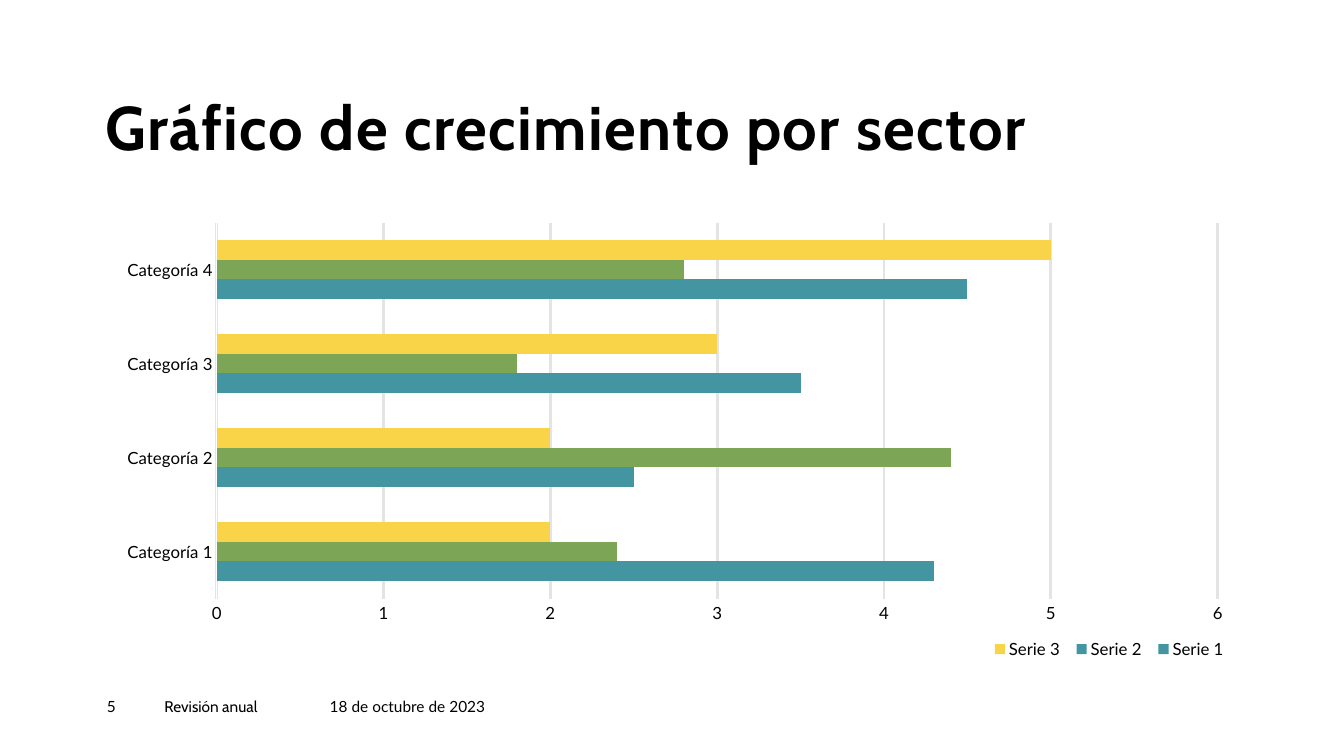
from lxml.etree import SubElement
from pptx import Presentation
from pptx.chart.data import CategoryChartData
from pptx.dml.color import RGBColor
from pptx.enum.chart import XL_CHART_TYPE as ChartType
from pptx.enum.chart import XL_LEGEND_POSITION as LegendPosition
from pptx.enum.chart import XL_TICK_MARK as TickMark
from pptx.enum.text import MSO_ANCHOR, MSO_AUTO_SIZE, PP_ALIGN
from pptx.oxml.ns import qn
from pptx.util import Inches, Pt

BLACK = RGBColor(0x00, 0x00, 0x00)
WHITE = RGBColor(0xFF, 0xFF, 0xFF)
GRID = RGBColor(0xE4, 0xE4, 0xE4)
TEAL = RGBColor(0x44, 0x95, 0xA2)
GREEN = RGBColor(0x7C, 0xA6, 0x55)
YELLOW = RGBColor(0xF9, 0xD4, 0x48)

HEADING_FONT = "Cabin"
BODY_FONT = "Lato"

CATEGORIES = [f"Categoría {number}" for number in range(1, 5)]
SERIES = [
    ("Serie 1", (4.3, 2.5, 3.5, 4.5), TEAL, TEAL),
    ("Serie 2", (2.4, 4.4, 1.8, 2.8), TEAL, GREEN),
    ("Serie 3", (2, 2, 3, 5), YELLOW, YELLOW),
]
FOOTER = [
    ("5", 0.57, BODY_FONT),
    ("Revisión anual", 1.64, HEADING_FONT),
    ("18 de octubre de 2023", 2.32, BODY_FONT),
]


def set_font(font, name, size, bold=False):
    font.name = name
    font.size = Pt(size)
    font.bold = bold
    font.color.rgb = BLACK


def fill_text(shape, text, name, size, bold=False, anchor=MSO_ANCHOR.TOP):
    frame = shape.text_frame
    frame.text = text
    frame.word_wrap = True
    frame.auto_size = MSO_AUTO_SIZE.NONE
    frame.vertical_anchor = anchor
    frame.margin_left = frame.margin_right = 0
    frame.margin_top = frame.margin_bottom = 0
    paragraph = frame.paragraphs[0]
    paragraph.alignment = PP_ALIGN.LEFT
    set_font(paragraph.font, name, size, bold)
    return paragraph


def set_layout(element, after, shares, inner=False):
    for layout in element.findall(qn("c:layout")):
        element.remove(layout)
    layout = SubElement(element, qn("c:layout"))
    manual = SubElement(layout, qn("c:manualLayout"))
    settings = [("layoutTarget", "inner")] if inner else []
    settings += [("xMode", "edge"), ("yMode", "edge")]
    settings += zip("xywh", shares)
    for tag, value in settings:
        SubElement(manual, qn(f"c:{tag}")).set("val", str(value))
    position = 0 if after is None else element.index(element.find(qn(after))) + 1
    element.insert(position, layout)


def add_title(slide, left, top, width, height):
    title = slide.shapes.title
    title.left, title.top = Inches(left), Inches(top)
    title.width, title.height = Inches(width), Inches(height)
    paragraph = fill_text(title, "Gráfico de crecimiento por sector",
                          HEADING_FONT, 44, True, MSO_ANCHOR.BOTTOM)
    paragraph.line_spacing = 0.9
    paragraph.runs[0]._r.get_or_add_rPr().set("spc", "100")


def format_axes(chart):
    for axis in (chart.category_axis, chart.value_axis):
        axis.major_tick_mark = axis.minor_tick_mark = TickMark.NONE
        set_font(axis.tick_labels.font, BODY_FONT, 12)
    category_line = chart.category_axis.format.line
    category_line.color.rgb = WHITE
    category_line.width = Pt(0.75)
    value_axis = chart.value_axis
    value_axis.minimum_scale, value_axis.maximum_scale = 0, 6
    value_axis.major_unit = 1
    value_axis.format.line.fill.background()
    grid_line = value_axis.major_gridlines.format.line
    grid_line.color.rgb = GRID
    grid_line.width = Pt(2)


def add_growth_chart(slide, left, top, width, height):
    data = CategoryChartData()
    data.categories = CATEGORIES
    for name, values, _, _ in SERIES:
        data.add_series(name, values)
    chart = slide.shapes.add_chart(
        ChartType.BAR_CLUSTERED, Inches(left), Inches(top),
        Inches(width), Inches(height), data).chart
    set_font(chart.font, BODY_FONT, 10)
    chart.has_title = False
    format_axes(chart)

    plot = chart.plots[0]
    plot.gap_width, plot.overlap = 182, 0
    plot.vary_by_categories = False
    for series, (_, values, key_color, bar_color) in zip(plot.series, SERIES):
        series.format.fill.solid()
        series.format.fill.fore_color.rgb = key_color
        if bar_color != key_color:
            for index in range(len(values)):
                fill = series.points[index].format.fill
                fill.solid()
                fill.fore_color.rgb = bar_color

    chart.has_legend = True
    legend = chart.legend
    legend.position = LegendPosition.BOTTOM
    legend.include_in_layout = False
    set_font(legend.font, BODY_FONT, 12)
    plot_area = chart._chartSpace.find(".//" + qn("c:plotArea"))
    set_layout(plot_area, None, (0.098, 0.02, 0.877, 0.829), inner=True)
    set_layout(legend._element, "c:legendPos", (0.77, 0.93, 0.22, 0.06))


def add_footer(slide, left, top, height):
    for text, width, font_name in FOOTER:
        box = slide.shapes.add_textbox(
            Inches(left), Inches(top), Inches(width), Inches(height))
        fill_text(box, text, font_name, 11)
        left += width


def main():
    presentation = Presentation()
    presentation.slide_width = Inches(13.33)
    presentation.slide_height = Inches(7.5)
    slide = presentation.slides.add_slide(presentation.slide_layouts[5])
    add_title(slide, 1.05, 0.96, 9.71, 0.67)
    add_growth_chart(slide, 1.04, 2.12, 11.32, 4.5)
    add_footer(slide, 1.06, 6.92, 0.27)
    presentation.save("out.pptx")


if __name__ == "__main__":
    main()
